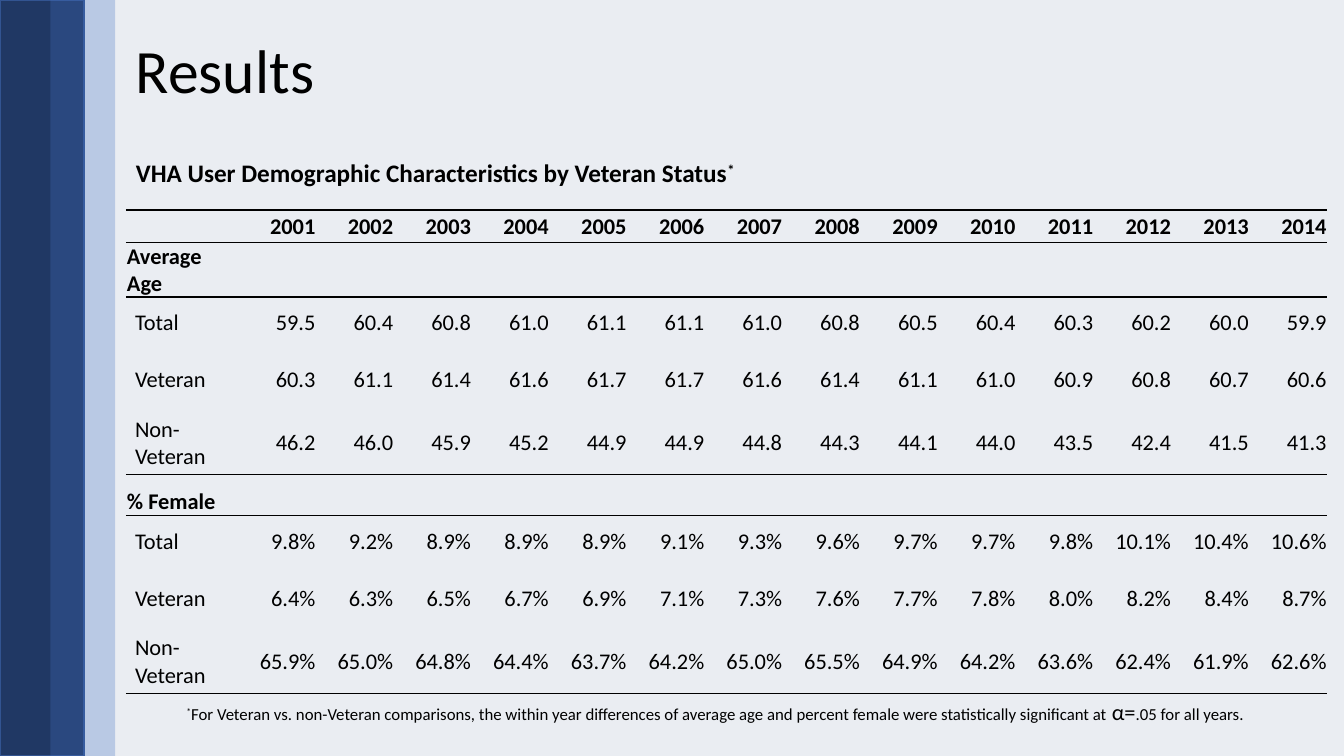
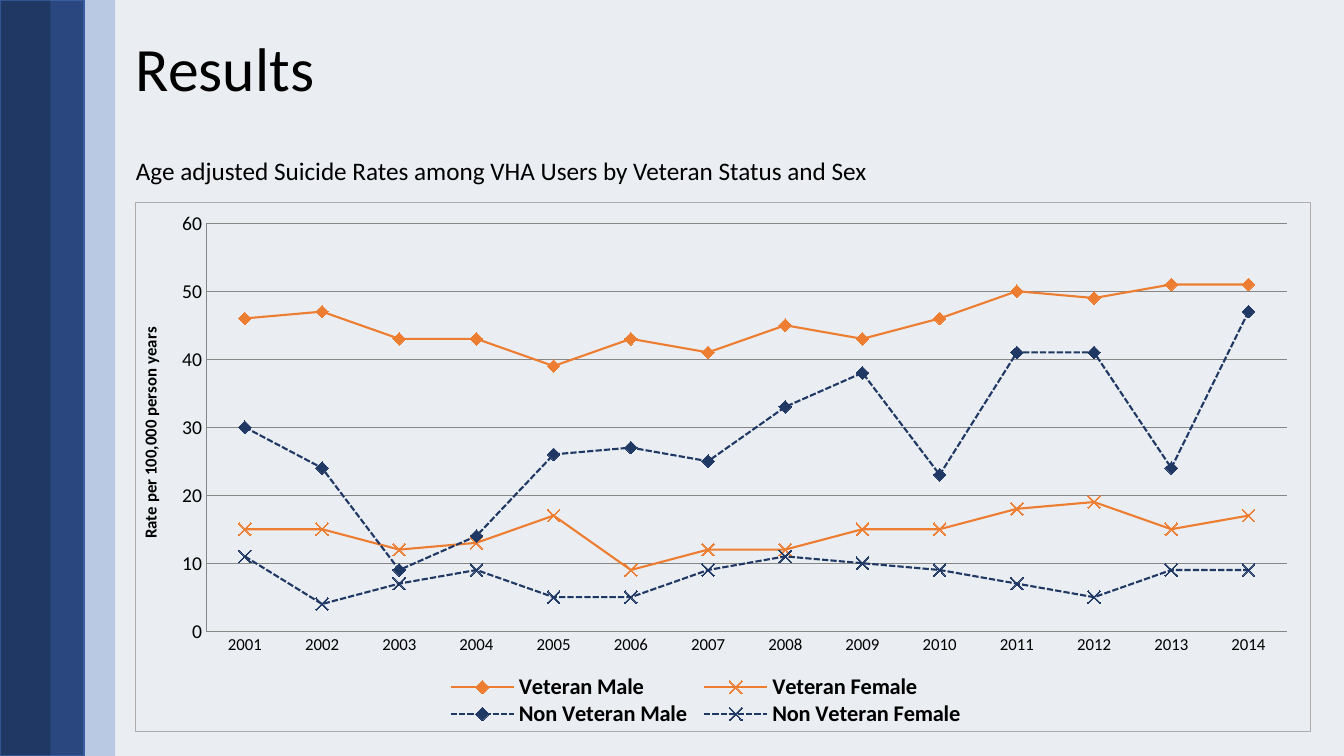
from dataclasses import dataclass
from typing import NamedTuple

from lxml import etree
from pptx import Presentation
from pptx.chart.data import CategoryChartData
from pptx.dml.color import RGBColor
from pptx.enum.chart import XL_CHART_TYPE, XL_LEGEND_POSITION, XL_MARKER_STYLE, XL_TICK_MARK
from pptx.enum.dml import MSO_LINE
from pptx.enum.shapes import MSO_SHAPE
from pptx.enum.text import MSO_ANCHOR, PP_ALIGN
from pptx.oxml import parse_xml
from pptx.oxml.ns import nsdecls, qn
from pptx.util import Emu, Inches, Pt

LINE_MARKERS = XL_CHART_TYPE.LINE_MARKERS
LEGEND_BOTTOM = XL_LEGEND_POSITION.BOTTOM
DIAMOND, CROSS = XL_MARKER_STYLE.DIAMOND, XL_MARKER_STYLE.X
NO_TICK = XL_TICK_MARK.NONE
DASHED = MSO_LINE.SQUARE_DOT
RECTANGLE = MSO_SHAPE.RECTANGLE
TOP, MIDDLE, BOTTOM = MSO_ANCHOR.TOP, MSO_ANCHOR.MIDDLE, MSO_ANCHOR.BOTTOM
LEFT, RIGHT = PP_ALIGN.LEFT, PP_ALIGN.RIGHT

FONT = "Calibri"
BLACK, NAVY, NAVY_EDGE, BLUE = "000000", "203864", "325491", "4472C4"
PAPER, ORANGE, GRID_GREY, FRAME_GREY = "EAEDF2", "ED7D31", "868686", "AFABAB"

# The slide is a grid of 160 columns by 90 rows of square units.
GRID_COLUMNS, GRID_ROWS = 160, 90
UNIT = Inches(1) // 12
MARGIN = 15
YEARS = [str(year) for year in range(2001, 2015)]
NO_STYLE_TABLE = "{2D5ABB26-0587-4C30-8999-92F81FD0307C}"


class Area(NamedTuple):
    """Left, top, width and height in grid units."""
    left: float
    top: float
    width: float
    height: float

    def lengths(self) -> list[Emu]:
        return [Emu(round(value * UNIT)) for value in self]


class Span(NamedTuple):
    text: str
    size: float
    bold: bool = False
    raised: bool = False


@dataclass
class TableRow:
    label: str
    height: float
    values: str = ""
    bold: bool = False
    indent: float = 0.01
    anchor: MSO_ANCHOR = MIDDLE
    rules: str = "TB"


@dataclass
class Line:
    name: str
    values: tuple
    color: str
    marker: XL_MARKER_STYLE
    dashed: bool = False


def measure(label: str, height: float, values: str, rules: str = "") -> TableRow:
    return TableRow(label, height, values, indent=0.09, rules=rules)


def section(label: str, height: float) -> TableRow:
    return TableRow(label, height, bold=True, anchor=BOTTOM)


DEMOGRAPHICS = [
    TableRow("", 0.32, " ".join(YEARS), bold=True),
    section("Average Age", 0.32),
    measure("Total", 0.5, "59.5 60.4 60.8 61.0 61.1 61.1 61.0 60.8 60.5 60.4 60.3 60.2 60.0 59.9", "T"),
    measure("Veteran", 0.63, "60.3 61.1 61.4 61.6 61.7 61.7 61.6 61.4 61.1 61.0 60.9 60.8 60.7 60.6"),
    measure("Non- Veteran", 0.63,
            "46.2 46.0 45.9 45.2 44.9 44.9 44.8 44.3 44.1 44.0 43.5 42.4 41.5 41.3", "B"),
    section("% Female", 0.41),
    measure("Total", 0.5,
            "9.8% 9.2% 8.9% 8.9% 8.9% 9.1% 9.3% 9.6% 9.7% 9.7% 9.8% 10.1% 10.4% 10.6%", "T"),
    measure("Veteran", 0.63,
            "6.4% 6.3% 6.5% 6.7% 6.9% 7.1% 7.3% 7.6% 7.7% 7.8% 8.0% 8.2% 8.4% 8.7%"),
    measure("Non- Veteran", 0.63,
            "65.9% 65.0% 64.8% 64.4% 63.7% 64.2% 65.0% 65.5% 64.9% 64.2% 63.6% 62.4% 61.9% 62.6%", "B"),
]

SUICIDE_RATES = [
    Line("Veteran Male", (46, 47, 43, 43, 39, 43, 41, 45, 43, 46, 50, 49, 51, 51), ORANGE, DIAMOND),
    Line("Veteran Female", (15, 15, 12, 13, 17, 9, 12, 12, 15, 15, 18, 19, 15, 17), ORANGE, CROSS),
    Line("Non Veteran Male", (30, 24, 9, 14, 26, 27, 25, 33, 38, 23, 41, 41, 24, 47),
         NAVY, DIAMOND, dashed=True),
    Line("Non Veteran Female", (11, 4, 7, 9, 5, 5, 9, 11, 10, 9, 7, 5, 9, 9),
         NAVY, CROSS, dashed=True),
]


def rgb(color: str) -> RGBColor:
    return RGBColor.from_string(color)


def style_font(font, size: float, bold: bool = False) -> None:
    font.name, font.size, font.bold = FONT, Pt(size), bold
    font.color.rgb = rgb(BLACK)


def style_line(line, color: str, width: float) -> None:
    line.color.rgb = rgb(color)
    line.width = Pt(width)


def add_text(page, area: Area, spans: list[Span], anchor=TOP, line_spacing: float = 1.0) -> None:
    frame = page.shapes.add_textbox(*area.lengths()).text_frame
    frame.word_wrap = True
    frame.vertical_anchor = anchor
    para = frame.paragraphs[0]
    para.line_spacing = line_spacing
    for span in spans:
        run = para.add_run()
        run.text = span.text
        style_font(run.font, span.size, span.bold)
        if span.raised:
            run._r.get_or_add_rPr().set("baseline", "30000")


def add_band(group, area: Area, color: str):
    band = group.shapes.add_shape(RECTANGLE, *area.lengths())
    band.shadow.inherit = False
    band.fill.solid()
    band.fill.fore_color.rgb = rgb(color)
    return band


def add_page(deck, title_area: Area):
    """Add a slide with the side bands and the title."""
    page = deck.slides.add_slide(deck.slide_layouts[6])
    page.background.fill.solid()
    page.background.fill.fore_color.rgb = rgb(PAPER)
    bands = page.shapes.add_group_shape()
    dark_band = add_band(bands, Area(0, 0, 10, GRID_ROWS), NAVY)
    style_line(dark_band.line, NAVY_EDGE, 1)
    light_band = add_band(bands, Area(6, 0, 7.7, GRID_ROWS), BLUE)
    light_band.line.fill.background()
    fill_color = light_band._element.spPr.find(qn("a:solidFill"))[0]
    etree.SubElement(fill_color, qn("a:alpha")).set("val", "29000")
    add_text(page, title_area, [Span("Results", 44)], MIDDLE, 0.9)
    return page


def rule_cell(cell, rules: str) -> None:
    """Draw the named sides (T, B) of a cell and clear the others."""
    properties = cell._tc.get_or_add_tcPr()
    for index, side in enumerate("LRTB"):
        fill = f'<a:solidFill><a:srgbClr val="{BLACK}"/></a:solidFill>' if side in rules else "<a:noFill/>"
        border = parse_xml(f'<a:ln{side} {nsdecls("a")} w="12700">{fill}</a:ln{side}>')
        properties.insert(index, border)


def fill_cell(cell, text: str, row: TableRow, is_label: bool) -> None:
    cell.fill.background()
    cell.vertical_anchor = row.anchor
    cell.margin_left = Inches(row.indent if is_label else 0.01)
    cell.margin_right = cell.margin_top = Inches(0.01)
    cell.margin_bottom = 0
    rule_cell(cell, row.rules)
    cell.text_frame.text = text
    para = cell.text_frame.paragraphs[0]
    para.alignment = LEFT if is_label else RIGHT
    for run in para.runs:
        style_font(run.font, 16, row.bold)


def add_demographics(page, area: Area, label_width: float) -> None:
    frame = page.shapes.add_table(len(DEMOGRAPHICS), len(YEARS) + 1, *area.lengths())
    table = frame.table
    table.first_row = table.horz_banding = False
    table._tbl.tblPr.find(qn("a:tableStyleId")).text = NO_STYLE_TABLE
    year_width = (area.width - label_width) / len(YEARS)
    for index, column in enumerate(table.columns):
        column.width = Emu(round((year_width if index else label_width) * UNIT))
    for row_index, row in enumerate(DEMOGRAPHICS):
        table.rows[row_index].height = Inches(row.height)
        values = row.values.split() or [""] * len(YEARS)
        for column_index, text in enumerate([row.label, *values]):
            fill_cell(table.cell(row_index, column_index), text, row, column_index == 0)


def place_part(part, index: int, shares: tuple, inner: bool = False) -> None:
    """Fix a chart part at x, y, w, h, given as shares of the chart."""
    for old_layout in part.findall(qn("c:layout")):
        part.remove(old_layout)
    target = '<c:layoutTarget val="inner"/>' if inner else ""
    modes = "".join(f'<c:{axis}Mode val="edge"/>' for axis in "xy")
    sizes = "".join(f'<c:{name} val="{share}"/>' for name, share in zip("xywh", shares))
    part.insert(index, parse_xml(
        f'<c:layout {nsdecls("c")}><c:manualLayout>{target}{modes}{sizes}</c:manualLayout></c:layout>'))


def style_series(series, line: Line) -> None:
    series.smooth = False
    style_line(series.format.line, line.color, 1.5)
    marker = series.marker
    marker.style, marker.size = line.marker, 9
    style_line(marker.format.line, line.color, 0.75)
    if line.marker == CROSS:
        marker.format.fill.background()
    else:
        marker.format.fill.solid()
        marker.format.fill.fore_color.rgb = rgb(line.color)
    if line.dashed:
        series.format.line.dash_style = DASHED


def style_axes(chart) -> None:
    for axis, size in ((chart.category_axis, 12), (chart.value_axis, 14)):
        axis.major_tick_mark = axis.minor_tick_mark = NO_TICK
        style_font(axis.tick_labels.font, size)
        style_line(axis.format.line, GRID_GREY, 0.75)
    axis = chart.value_axis
    axis.minimum_scale, axis.maximum_scale, axis.major_unit = 0, 60, 10
    style_line(axis.major_gridlines.format.line, GRID_GREY, 0.75)
    title = axis.axis_title.text_frame
    title.text = "Rate per 100,000 person years"
    style_font(title.paragraphs[0].runs[0].font, 12, True)
    title._txBody.bodyPr.set("rot", "-5400000")
    title._txBody.bodyPr.set("vert", "horz")


def add_rates_chart(page, area: Area) -> None:
    data = CategoryChartData()
    data.categories = YEARS
    for line in SUICIDE_RATES:
        data.add_series(line.name, line.values)
    chart = page.shapes.add_chart(LINE_MARKERS, *area.lengths(), data).chart
    chart.has_title = False
    style_font(chart.font, 10)
    plot = chart.plots[0]
    plot.vary_by_categories = False
    for series, line in zip(plot.series, SUICIDE_RATES):
        style_series(series, line)
    style_axes(chart)
    chart.has_legend = True
    chart.legend.position = LEGEND_BOTTOM
    chart.legend.include_in_layout = False
    style_font(chart.legend.font, 16, True)
    place_part(chart._chartSpace.chart.plotArea, 0, (0.06, 0.04, 0.92, 0.77), inner=True)
    place_part(chart.legend._element, 1, (0.26, 0.89, 0.45, 0.1))
    chart._chartSpace.chart.addnext(parse_xml(
        f'<c:spPr {nsdecls("c", "a")}><a:noFill/><a:ln w="9525"><a:solidFill>'
        f'<a:srgbClr val="{FRAME_GREY}"/></a:solidFill></a:ln></c:spPr>'))


def add_demographics_page(deck) -> None:
    page = add_page(deck, Area(MARGIN, 0, 138, 17.4))
    add_text(page, Area(MARGIN, 18.2, 85, 4.8), [
        Span("VHA User Demographic Characteristics by Veteran Status", 18, bold=True),
        Span("*", 18, bold=True, raised=True)])
    add_demographics(page, Area(MARGIN, 25, 143.1, 55), label_width=13.4)
    add_text(page, Area(21, 82.5, 141 - 2, 4.4), [
        Span("*", 12, raised=True),
        Span("For Veteran vs. non-Veteran comparisons, the within year differences of average age "
             "and percent female were statistically significant at ", 12),
        Span("α=", 16),
        Span(".05 for all years.", 12)])


def add_rates_page(deck) -> None:
    page = add_page(deck, Area(MARGIN, 1, 138, 15))
    add_rates_chart(page, Area(16.1, 24, 140, 63.2))
    add_text(page, Area(MARGIN, 17.9, 99, 4.8), [
        Span("Age adjusted Suicide Rates among VHA Users by Veteran Status and Sex", 18)])


def main() -> None:
    deck = Presentation()
    deck.slide_width, deck.slide_height = GRID_COLUMNS * UNIT, GRID_ROWS * UNIT
    add_demographics_page(deck)
    add_rates_page(deck)
    deck.save("out.pptx")


if __name__ == "__main__":
    main()
